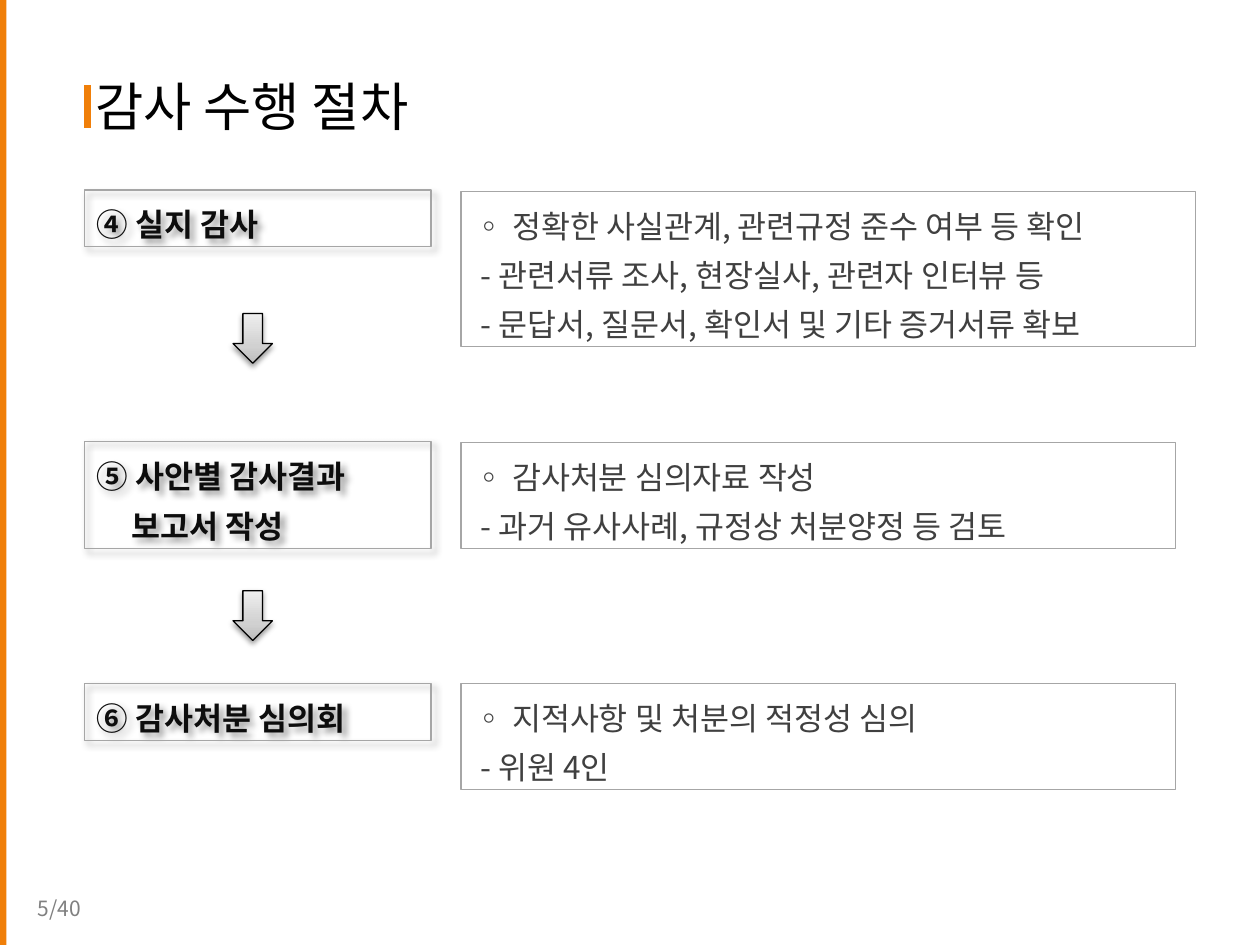
"""Build the audit procedure slide, steps four to six."""
from dataclasses import dataclass

import pptx
import pptx.dml.color
import pptx.enum.shapes
import pptx.enum.text
import pptx.oxml
import pptx.oxml.ns
import pptx.util

Pt = pptx.util.Pt
Preset = pptx.enum.shapes.MSO_SHAPE
Anchor = pptx.enum.text.MSO_ANCHOR
NAMESPACE = pptx.oxml.ns.nsdecls("a")


@dataclass(frozen=True)
class Theme:
    font: str = "Noto Sans CJK KR"
    accent: str = "F07F09"
    border: str = "A6A6A6"
    arrow_line: str = "000000"
    arrow_stops: tuple = ((0, "BDBDBD"), (35, "D1D1D1"), (100, "EEEEEE"))
    title: str = "000000"
    heading: str = "0D0D0D"
    detail: str = "404040"
    page: str = "808080"
    title_size: float = 30
    body_size: float = 18
    page_size: float = 12


@dataclass(frozen=True)
class Area:
    left: float
    top: float
    width: float
    height: float

    def lengths(self) -> list:
        return [Pt(value) for value in (self.left, self.top, self.width, self.height)]


@dataclass(frozen=True)
class Shadow:
    opacity: float
    blur: float
    distance: float
    angle: float


@dataclass(frozen=True)
class Step:
    top: float
    heading: tuple
    heading_height: float
    details: tuple
    details_top: float
    details_width: float
    details_height: float


THEME = Theme()
HEADING_SHADOW = Shadow(40, 4, 3, 45)
ARROW_SHADOW = Shadow(38, 3.1, 1.6, 90)
HEADING_LEFT, HEADING_WIDTH, DETAILS_LEFT = 48.24, 198, 263.5
ARROW_TOPS = (179.2, 337.6)
STEPS = (
    Step(108.6, ("④ 실지 감사",), 32.4,
         ("◦ 정확한 사실관계, 관련규정 준수 여부 등 확인",
          "- 관련서류 조사, 현장실사, 관련자 인터뷰 등",
          "- 문답서, 질문서, 확인서 및 기타 증거서류 확보"), 109.6, 419.5, 88.4),
    Step(252.4, ("⑤ 사안별 감사결과", "보고서 작성"), 61.2,
         ("◦ 감사처분 심의자료 작성",
          "- 과거 유사사례, 규정상 처분양정 등 검토"), 252.8, 408.2, 60.6),
    Step(390.6, ("⑥ 감사처분 심의회",), 32.4,
         ("◦ 지적사항 및 처분의 적정성 심의", "- 위원 4인"), 390.6, 408.2, 60.6),
)


def rgb(value: str):
    """Return a colour for a hex value."""
    return pptx.dml.color.RGBColor.from_string(value)


def write_text(shape, lines: tuple, *, size: float, color: str, bold: bool = False,
               spacing: float = 1, indent: float = 0, margin_left: float = 7.2,
               anchor=Anchor.MIDDLE, grow: bool = True) -> None:
    """Write lines into a shape, indenting every line after the first."""
    frame = shape.text_frame
    frame.word_wrap = True
    frame.vertical_anchor = anchor
    frame.margin_left = Pt(margin_left)
    fit = pptx.enum.text.MSO_AUTO_SIZE
    frame.auto_size = fit.SHAPE_TO_FIT_TEXT if grow else fit.NONE
    for index, line in enumerate(lines):
        paragraph = frame.add_paragraph() if index else frame.paragraphs[0]
        paragraph.alignment = pptx.enum.text.PP_ALIGN.LEFT
        paragraph.line_spacing = float(spacing)
        if index and indent:
            paragraph._p.get_or_add_pPr().set("marL", str(Pt(indent)))
        run = paragraph.add_run()
        run.text = line
        run.font.size = Pt(size)
        run.font.bold = bold
        run.font.color.rgb = rgb(color)
        run.font.name = THEME.font
        run._r.get_or_add_rPr().append(
            pptx.oxml.parse_xml(f'<a:ea {NAMESPACE} typeface="{THEME.font}"/>'))


def add_shape(slide, preset, area: Area, *, fill: str | None = None,
              line: str | None = None, shadow: Shadow | None = None):
    """Add a preset shape with an optional fill, outline and shadow."""
    shape = slide.shapes.add_shape(preset, *area.lengths())
    shape.shadow.inherit = False
    if fill:
        shape.fill.solid()
        shape.fill.fore_color.rgb = rgb(fill)
    else:
        shape.fill.background()
    if line:
        shape.line.color.rgb = rgb(line)
        shape.line.width = Pt(0.75)
    else:
        shape.line.fill.background()
    if shadow:
        effects = shape._element.spPr.find(pptx.oxml.ns.qn("a:effectLst"))
        effects.append(pptx.oxml.parse_xml(
            f'<a:outerShdw {NAMESPACE} blurRad="{Pt(shadow.blur)}" '
            f'dist="{Pt(shadow.distance)}" dir="{shadow.angle * 60000}" '
            f'algn="tl" rotWithShape="0"><a:srgbClr val="000000">'
            f'<a:alpha val="{shadow.opacity * 1000}"/></a:srgbClr></a:outerShdw>'))
    return shape


def add_arrow(slide, top: float) -> None:
    """Add a shaded arrow leading down to the next step."""
    arrow = add_shape(slide, Preset.DOWN_ARROW, Area(133.2, top, 22.5, 28.4),
                      line=THEME.arrow_line, shadow=ARROW_SHADOW)
    stops = "".join(f'<a:gs pos="{position * 1000}"><a:srgbClr val="{color}"/></a:gs>'
                    for position, color in THEME.arrow_stops)
    properties = arrow._element.spPr
    properties.replace(
        properties.find(pptx.oxml.ns.qn("a:noFill")),
        pptx.oxml.parse_xml(f'<a:gradFill {NAMESPACE} rotWithShape="1"><a:gsLst>{stops}'
                            '</a:gsLst><a:lin ang="16200000" scaled="0"/></a:gradFill>'))


def add_step(slide, step: Step) -> None:
    """Add the heading box and the details box of a step."""
    heading = add_shape(
        slide, Preset.RECTANGLE,
        Area(HEADING_LEFT, step.top, HEADING_WIDTH, step.heading_height),
        line=THEME.border, shadow=HEADING_SHADOW)
    write_text(heading, step.heading, size=THEME.body_size, color=THEME.heading,
               bold=True, spacing=1.3, indent=20)
    details = add_shape(
        slide, Preset.RECTANGLE,
        Area(DETAILS_LEFT, step.details_top, step.details_width, step.details_height),
        line=THEME.border)
    write_text(details, step.details, size=THEME.body_size, color=THEME.detail,
               spacing=1.3, indent=4)


def main() -> None:
    """Build and save the slide."""
    deck = pptx.Presentation()
    deck.slide_width, deck.slide_height = Pt(720), Pt(540)
    slide = deck.slides.add_slide(deck.slide_layouts[6])
    for step in STEPS:
        add_step(slide, step)
    for top in ARROW_TOPS:
        add_arrow(slide, top)
    add_shape(slide, Preset.FLOWCHART_PROCESS, Area(48.24, 48.8, 3.6, 24.6),
              fill=THEME.accent)
    add_shape(slide, Preset.RECTANGLE, Area(0, 0, 3.6, 540), fill=THEME.accent)
    title = slide.shapes.add_textbox(*Area(31, 31.7, 368.6, 56.9).lengths())
    write_text(title, ("감사 수행 절차",), size=THEME.title_size, color=THEME.title,
               margin_left=23.5, grow=False)
    page = slide.shapes.add_textbox(*Area(14.4, 508.3, 39.6, 21.6).lengths())
    write_text(page, ("5/40",), size=THEME.page_size, color=THEME.page,
               anchor=Anchor.TOP)
    deck.save("out.pptx")


if __name__ == "__main__":
    main()
